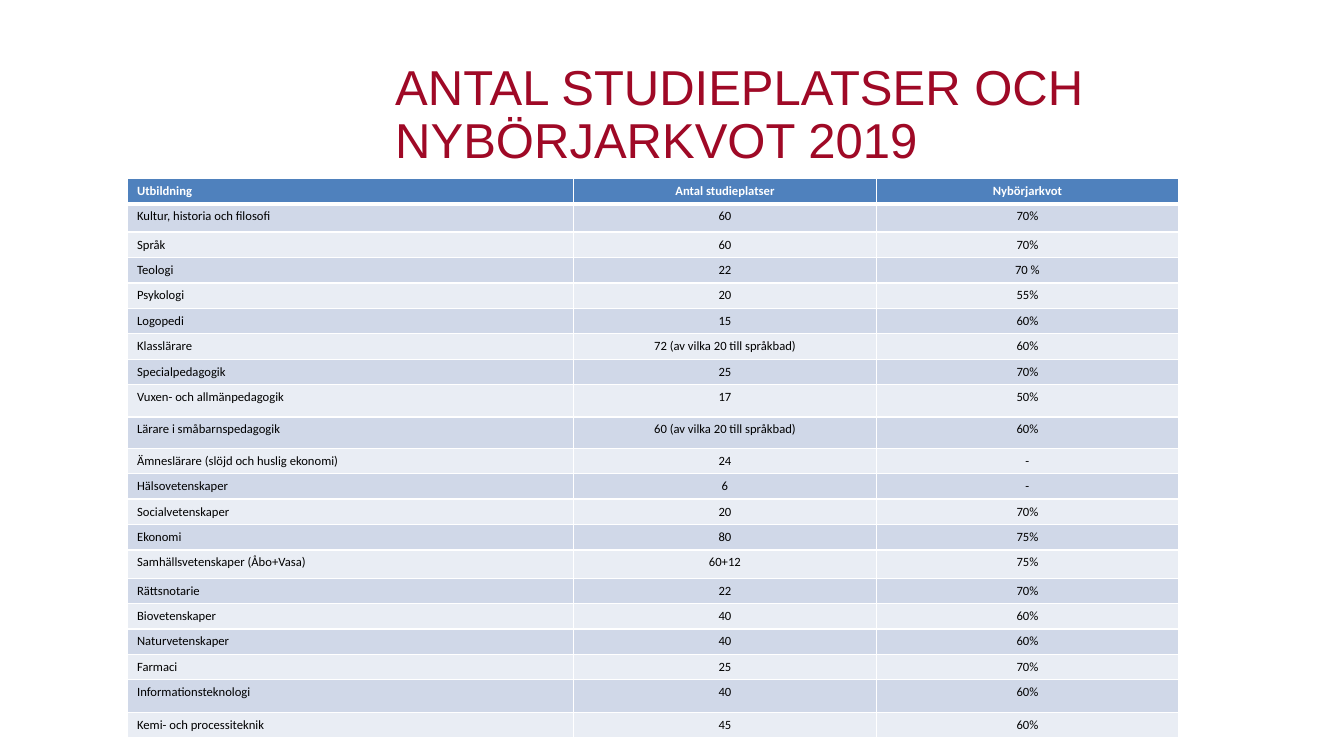
from dataclasses import dataclass

from lxml.etree import SubElement
from pptx import Presentation
from pptx.dml.color import RGBColor
from pptx.enum.text import MSO_ANCHOR as Anchor, MSO_AUTO_SIZE as Fit, PP_ALIGN as Align
from pptx.oxml.ns import qn
from pptx.util import Inches, Pt

WHITE, BLACK, RED = "FFFFFF", "000000", "9F0926"
HEAD, DARK, LIGHT = "4F81BD", "D0D8E8", "E9EDF4"
WIDTHS = (4.43, 3, 3)


@dataclass
class Course:
    name: str
    seats: str
    quota: str
    height: float = 0.25


COURSES = [
    Course("Utbildning", "Antal studieplatser", "Nybörjarkvot"),
    Course("Kultur, historia och filosofi", "60", "70%", 0.28),
    Course("Språk", "60", "70%"),
    Course("Teologi", "22", "70 %"),
    Course("Psykologi", "20", "55%"),
    Course("Logopedi", "15", "60%"),
    Course("Klasslärare", "72 (av vilka 20 till språkbad)", "60%"),
    Course("Specialpedagogik", "25", "70%"),
    Course("Vuxen- och allmänpedagogik", "17", "50%", 0.32),
    Course("Lärare i småbarnspedagogik", "60 (av vilka 20 till språkbad)", "60%", 0.31),
    Course("Ämneslärare (slöjd och huslig ekonomi)", "24", "-"),
    Course("Hälsovetenskaper", "6", "-"),
    Course("Socialvetenskaper", "20", "70%"),
    Course("Ekonomi", "80", "75%"),
    Course("Samhällsvetenskaper (Åbo+Vasa)", "60+12", "75%", 0.28),
    Course("Rättsnotarie", "22", "70%"),
    Course("Biovetenskaper", "40", "60%"),
    Course("Naturvetenskaper", "40", "60%"),
    Course("Farmaci", "25", "70%"),
    Course("Informationsteknologi", "40", "60%", 0.32),
    Course("Kemi- och processiteknik", "45", "60%"),
]


def color(code: str) -> RGBColor:
    return RGBColor.from_string(code)


def write(frame, text: str, *, size: float, face: str, ink: str,
          bold: bool = False, align=Align.LEFT, space: float = 1.0) -> None:
    para = frame.paragraphs[0]
    para.alignment = align
    para.line_spacing = space
    run = para.add_run()
    run.text = text
    font = run.font
    font.size, font.name, font.bold = Pt(size), face, bold
    font.color.rgb = color(ink)


def edge(cell, side: str, width: float) -> None:
    line = SubElement(cell._tc.get_or_add_tcPr(), qn(f"a:ln{side}"), w=str(Pt(width)))
    fill = SubElement(line, qn("a:solidFill"))
    SubElement(fill, qn("a:srgbClr"), val=WHITE)


def draw_title(slide) -> None:
    title = slide.shapes.title
    title.left, title.top = Inches(3.92), Inches(0.63)
    title.width, title.height = Inches(8.34), Inches(1.94)
    frame = title.text_frame
    frame.margin_left = frame.margin_right = frame.margin_top = frame.margin_bottom = 0
    frame.word_wrap, frame.auto_size = True, Fit.NONE
    frame.vertical_anchor = Anchor.TOP
    write(frame, "ANTAL STUDIEPLATSER OCH NYBÖRJARKVOT 2019",
          size=35, face="Arial", ink=RED, space=0.9)


def draw_cell(cell, text: str, row: int, col: int) -> None:
    head = row == 0
    edges = {"L": 1, "R": 1, "T": 3 if row == 1 else 1, "B": 3 if head else 1}
    for side, width in edges.items():
        edge(cell, side, width)
    cell.fill.solid()
    cell.fill.fore_color.rgb = color(HEAD if head else DARK if row % 2 else LIGHT)
    cell.margin_left = cell.margin_right = Inches(0.1)
    cell.margin_top = cell.margin_bottom = Inches(0.05)
    write(cell.text_frame, text, size=9, face="Calibri", bold=head,
          ink=WHITE if head else BLACK, align=Align.CENTER if col else Align.LEFT)


def draw_table(slide) -> None:
    high = sum(course.height for course in COURSES)
    table = slide.shapes.add_table(len(COURSES), len(WIDTHS), Inches(1.26), Inches(1.77),
                                   Inches(sum(WIDTHS)), Inches(high)).table
    for col, width in enumerate(WIDTHS):
        table.columns[col].width = Inches(width)
    for row, course in enumerate(COURSES):
        table.rows[row].height = Inches(course.height)
        for col, text in enumerate((course.name, course.seats, course.quota)):
            draw_cell(table.cell(row, col), text, row, col)


def main() -> None:
    deck = Presentation()
    deck.slide_width, deck.slide_height = Inches(13.33), Inches(7.5)
    slide = deck.slides.add_slide(deck.slide_layouts[5])
    draw_title(slide)
    draw_table(slide)
    deck.save("out.pptx")


if __name__ == "__main__":
    main()
